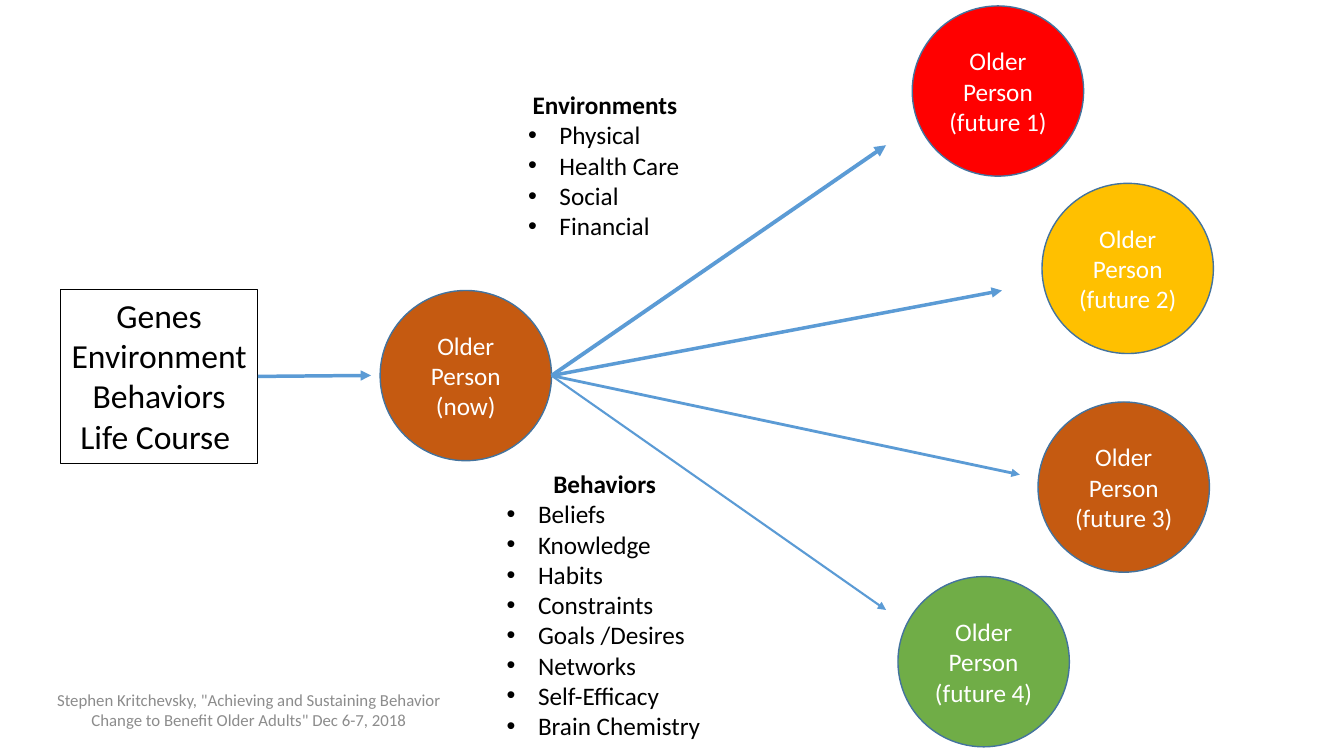
from lxml import etree
from pptx import Presentation
from pptx.dml.color import RGBColor
from pptx.enum.shapes import MSO_CONNECTOR, MSO_SHAPE
from pptx.enum.text import MSO_ANCHOR, MSO_AUTO_SIZE, PP_ALIGN
from pptx.oxml.ns import qn
from pptx.util import Cm, Pt

BLACK = RGBColor(0x00, 0x00, 0x00)
WHITE = RGBColor(0xFF, 0xFF, 0xFF)
GRAY = RGBColor(0x8C, 0x8C, 0x8C)
RED = RGBColor(0xFF, 0x00, 0x00)
AMBER = RGBColor(0xFF, 0xC0, 0x00)
BROWN = RGBColor(0xC5, 0x5A, 0x11)
GREEN = RGBColor(0x70, 0xAD, 0x47)
OUTLINE = RGBColor(0x43, 0x73, 0x9E)
ARROW = RGBColor(0x5B, 0x9B, 0xD5)

CIRCLE_WIDTH, CIRCLE_HEIGHT = 4.32, 4.29
BULLET_INDENT = Cm(0.79)


def write_lines(text_frame, lines, size, color, alignment=PP_ALIGN.CENTER):
    """Write one paragraph per line and return the paragraphs."""
    for index, line in enumerate(lines):
        paragraph = text_frame.add_paragraph() if index else text_frame.paragraphs[0]
        paragraph.text = line
        paragraph.alignment = alignment
        paragraph.font.name = "Calibri"
        paragraph.font.size = Pt(size)
        paragraph.font.color.rgb = color
    return text_frame.paragraphs


def add_arrow(start, end, width):
    connector = slide.shapes.add_connector(
        MSO_CONNECTOR.STRAIGHT, *(Cm(value) for value in start + end))
    connector.line.color.rgb = ARROW
    connector.line.width = Pt(width)
    etree.SubElement(connector.line._get_or_add_ln(), qn("a:tailEnd"), type="triangle")
    etree.SubElement(connector._element.spPr, qn("a:effectLst"))
    return connector


presentation = Presentation()
presentation.slide_width = Cm(33.87)
presentation.slide_height = Cm(19.05)
slide = presentation.slides.add_slide(presentation.slide_layouts[6])

# Older person, now and in four futures
now_left, now_top = 9.58, 7.32
persons = [
    ("now", now_left, now_top, BROWN),
    ("future 4", 22.63, 14.53, GREEN),
    ("future 3", 26.16, 10.13, BROWN),
    ("future 2", 26.26, 4.62, AMBER),
    ("future 1", 22.99, 0.15, RED),
]
for stage, left, top, color in persons:
    circle = slide.shapes.add_shape(
        MSO_SHAPE.OVAL, Cm(left), Cm(top), Cm(CIRCLE_WIDTH), Cm(CIRCLE_HEIGHT))
    circle.shadow.inherit = False
    circle.fill.solid()
    circle.fill.fore_color.rgb = color
    circle.line.color.rgb = OUTLINE
    circle.line.width = Pt(1)
    circle.text_frame.vertical_anchor = MSO_ANCHOR.MIDDLE
    write_lines(circle.text_frame, ["Older Person", f"({stage})"], 18, WHITE)

# Arrows to the futures
now_right = (now_left + CIRCLE_WIDTH, now_top + CIRCLE_HEIGHT / 2)
for end, width in [((22.33, 3.66), 2.75), ((25.25, 7.32), 2.5),
                   ((25.7, 11.96), 2), ((22.33, 15.37), 1.5)]:
    add_arrow(now_right, end, width)

# Origins
origins = slide.shapes.add_shape(
    MSO_SHAPE.RECTANGLE, Cm(1.52), Cm(7.3), Cm(4.98), Cm(4.37))
origins.shadow.inherit = False
origins.fill.background()
origins.line.color.rgb = BLACK
origins.line.width = Pt(0.75)
origins.text_frame.word_wrap = False
origins.text_frame.auto_size = MSO_AUTO_SIZE.SHAPE_TO_FIT_TEXT
origins.text_frame.vertical_anchor = MSO_ANCHOR.TOP
write_lines(origins.text_frame,
            ["Genes", "Environment", "Behaviors", "Life Course "], 24, BLACK)
add_arrow((6.5, 9.43), (9.35, 9.46), 2.5).begin_connect(origins, 3)

# Influences
influences = [
    ((13.06, 2.13, 4.37, 4.11), "Environments",
     ["Physical", "Health Care", "Social", "Financial"]),
    ((12.52, 11.68, 5.44, 7.19), "Behaviors",
     ["Beliefs", "Knowledge", "Habits", "Constraints", "Goals /Desires",
      "Networks", "Self-Efficacy", "Brain Chemistry"]),
]
for box, heading, items in influences:
    text_frame = slide.shapes.add_textbox(*(Cm(value) for value in box)).text_frame
    text_frame.word_wrap = False
    text_frame.auto_size = MSO_AUTO_SIZE.SHAPE_TO_FIT_TEXT
    title, *bullets = write_lines(text_frame, [heading] + items, 18, BLACK, PP_ALIGN.LEFT)
    title.alignment = PP_ALIGN.CENTER
    title.font.bold = True
    for paragraph in bullets:
        properties = paragraph._p.get_or_add_pPr()
        properties.set("marL", str(BULLET_INDENT))
        properties.set("indent", str(-BULLET_INDENT))
        bullet_font = etree.Element(qn("a:buFont"), typeface="Arial")
        bullet = etree.Element(qn("a:buChar"), char="•")
        properties.insert(0, bullet_font)
        bullet_font.addnext(bullet)

# Citation
citation = slide.shapes.add_textbox(Cm(0.56), Cm(17.37), Cm(11.43), Cm(1.02)).text_frame
citation.word_wrap = True
citation.vertical_anchor = MSO_ANCHOR.MIDDLE
write_lines(citation, ['Stephen Kritchevsky, "Achieving and Sustaining Behavior '
                       'Change to Benefit Older Adults" Dec 6-7, 2018'], 12, GRAY)

presentation.save("out.pptx")
